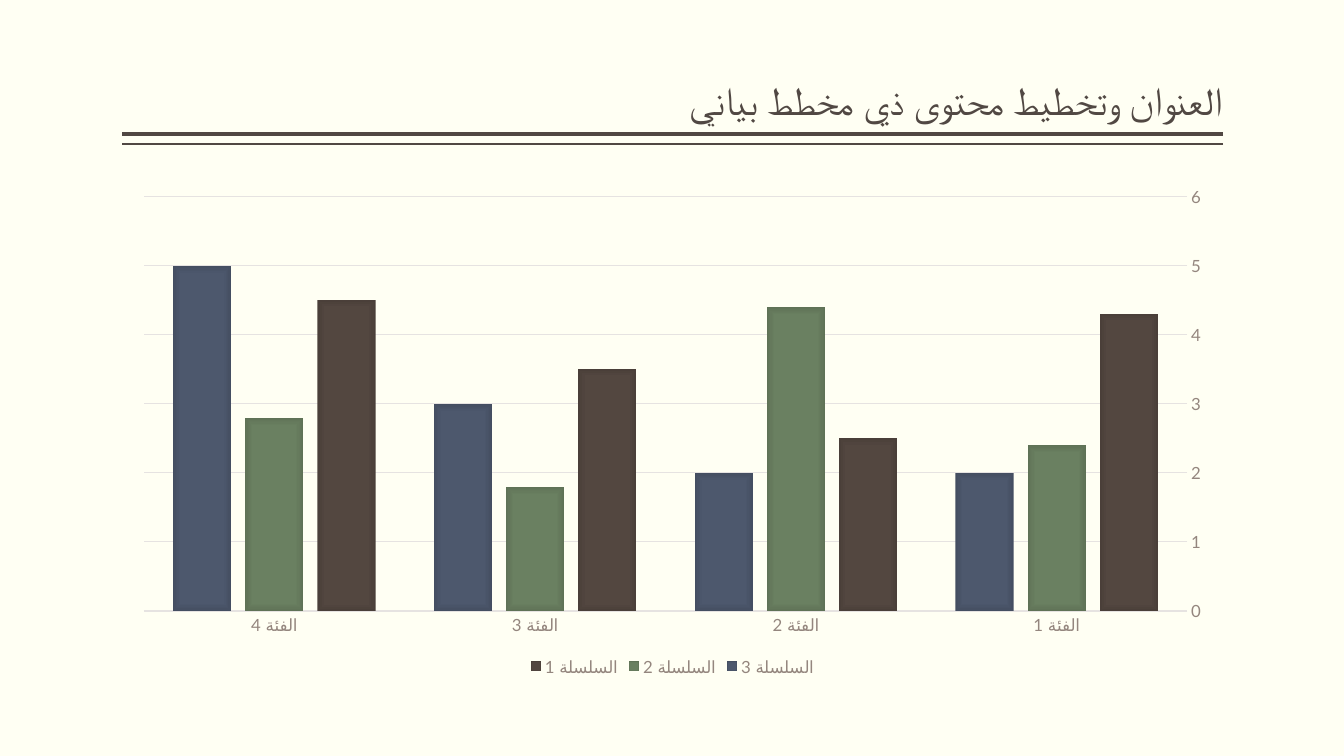
from lxml.etree import SubElement
from pptx import Presentation
from pptx.chart.data import CategoryChartData
from pptx.dml.color import RGBColor
from pptx.enum.chart import XL_CHART_TYPE, XL_LEGEND_POSITION, XL_TICK_MARK
from pptx.enum.shapes import MSO_CONNECTOR
from pptx.enum.text import MSO_ANCHOR, MSO_AUTO_SIZE, PP_ALIGN
from pptx.oxml.ns import qn
from pptx.util import Inches, Pt

COLORS = {"paper": "FFFFF3", "ink": "514843", "label": "94867E", "grid": "E6E3E1"}
SERIES = {
    "السلسلة 1": ((4.3, 2.5, 3.5, 4.5), ("544740", "534740", "4A3F39")),
    "السلسلة 2": ((2.4, 4.4, 1.8, 2.8), ("6B8162", "6A8061", "5F7256")),
    "السلسلة 3": ((2, 2, 3, 5), ("4E596E", "4D586D", "444E61")),
}
STOPS = (0, 71, 100)
LEFT, WIDTH = Inches(1.21), Inches(10.92)


def style_font(font, size, color, name="Lato"):
    font.name = name
    font.size = Pt(size)
    font.color.rgb = RGBColor.from_string(COLORS[color])


def fill_from_center(series, colors):
    properties = series.format.fill._xPr
    gradient = SubElement(properties, qn("a:gradFill"), rotWithShape="1")
    stops = SubElement(gradient, qn("a:gsLst"))
    for position, color in zip(STOPS, colors):
        stop = SubElement(stops, qn("a:gs"), pos=str(position * 1000))
        SubElement(stop, qn("a:srgbClr"), val=color)
    shape_path = SubElement(gradient, qn("a:path"), {"path": "rect"})
    SubElement(shape_path, qn("a:fillToRect"), l="50000", t="50000", r="50000", b="50000")


deck = Presentation()
deck.slide_width, deck.slide_height = Inches(13.33), Inches(7.5)
page = deck.slides.add_slide(deck.slide_layouts[5])
page.background.fill.solid()
page.background.fill.fore_color.rgb = RGBColor.from_string(COLORS["paper"])

for top, weight in ((1.33, 3), (1.43, 1)):
    rule = page.shapes.add_connector(
        MSO_CONNECTOR.STRAIGHT, LEFT + WIDTH, Inches(top), LEFT, Inches(top))
    rule.line.color.rgb = RGBColor.from_string(COLORS["ink"])
    rule.line.width = Pt(weight)
    SubElement(rule._element.spPr, qn("a:effectLst"))

title = page.shapes.title
title.left, title.top, title.width, title.height = LEFT, Inches(0.08), WIDTH, Inches(1.2)
box = title.text_frame
box.text = "العنوان وتخطيط محتوى ذي مخطط بياني"
box.auto_size = MSO_AUTO_SIZE.NONE
box.word_wrap = True
box.vertical_anchor = MSO_ANCHOR.BOTTOM
box.margin_left = box.margin_right = 0
box.margin_top = box.margin_bottom = Inches(0.05)
para = box.paragraphs[0]
para.alignment = PP_ALIGN.RIGHT
para.line_spacing = 0.9
para._p.get_or_add_pPr().set("rtl", "1")
style_font(para.font, 28, "ink")

data = CategoryChartData()
data.categories = [f"الفئة {number}" for number in range(1, 5)]
for name, (values, colors) in SERIES.items():
    data.add_series(name, values)
chart = page.shapes.add_chart(
    XL_CHART_TYPE.COLUMN_CLUSTERED, LEFT, Inches(1.75), WIDTH, Inches(5), data).chart
chart.has_title = False
style_font(chart.font, 10, "ink", "Calibri")

plot = chart.plots[0]
plot.vary_by_categories = False
plot.gap_width, plot.overlap = 100, -24
for series, (values, colors) in zip(plot.series, SERIES.values()):
    series.invert_if_negative = False
    fill_from_center(series, colors)

for axis in (chart.category_axis, chart.value_axis):
    axis.major_tick_mark = axis.minor_tick_mark = XL_TICK_MARK.NONE
    style_font(axis.tick_labels.font, 12, "label")
chart.category_axis.reverse_order = True
chart.value_axis.minimum_scale, chart.value_axis.maximum_scale = 0, 6
chart.value_axis.major_unit = 1
chart.value_axis.format.line.fill.background()
grid_lines = chart.value_axis.major_gridlines
for line, weight in ((chart.category_axis.format.line, 1), (grid_lines.format.line, 0.75)):
    line.color.rgb = RGBColor.from_string(COLORS["grid"])
    line.width = Pt(weight)

chart.has_legend = True
chart.legend.position = XL_LEGEND_POSITION.BOTTOM
chart.legend.include_in_layout = False
style_font(chart.legend.font, 12, "label")

for root in (title._element, chart._chartSpace):
    for latin in list(root.iter(qn("a:latin"))):
        SubElement(latin.getparent(), qn("a:cs"), typeface=latin.get("typeface"))

deck.save("out.pptx")
